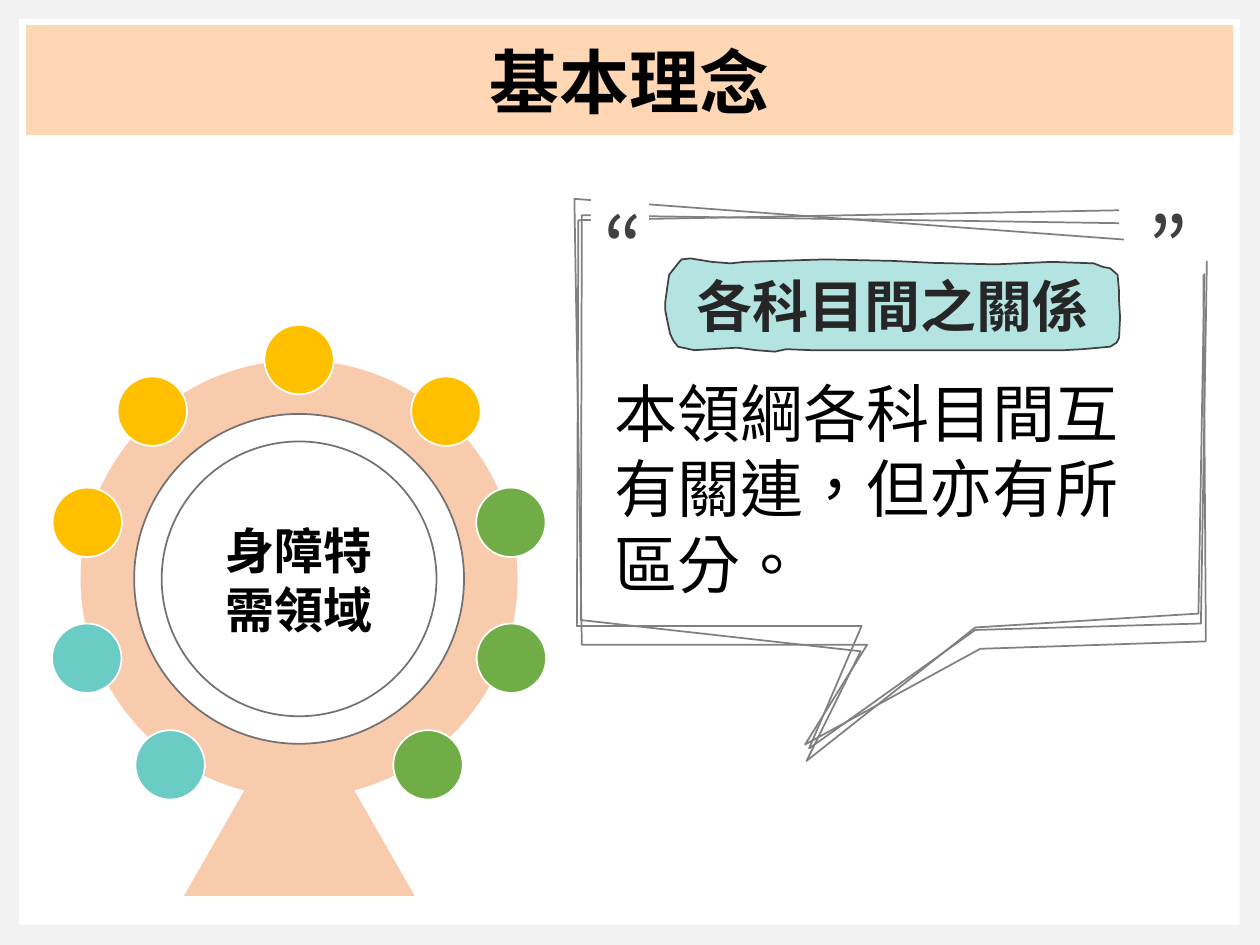
from dataclasses import dataclass

from lxml.etree import SubElement
from pptx import Presentation
from pptx.dml.color import RGBColor
from pptx.enum.shapes import MSO_SHAPE
from pptx.enum.text import MSO_ANCHOR, PP_ALIGN
from pptx.oxml.ns import qn
from pptx.util import Cm, Pt


@dataclass(frozen=True)
class Theme:
    backdrop: str = "F2F2F2"
    white: str = "FFFFFF"
    black: str = "000000"
    banner: str = "FFCDA3"
    wheel: str = "F8CBAD"
    ring: str = "767171"
    frame: str = "808080"
    dark: str = "404040"
    label_text: str = "262626"
    teal: str = "6BCBC5"
    gold: str = "FFC000"
    green: str = "70AD47"
    heading_font: str = "Noto Sans CJK SC"
    quote_font: str = "Noto Sans CJK KR"
    body_font: str = "Calibri"
    title_size: int = 40
    label_size: int = 32
    hub_size: int = 28
    body_size: int = 36
    quote_size: int = 48


theme = Theme()


def paint(shape, fill=None, line=None, alpha=None):
    shape.shadow.inherit = False
    if fill:
        shape.fill.solid()
        shape.fill.fore_color.rgb = RGBColor.from_string(fill)
    else:
        shape.fill.background()
    if alpha:
        color = shape.fill._xPr.find(qn("a:solidFill"))[0]
        SubElement(color, qn("a:alpha")).set("val", str(alpha * 1000))
    if line:
        shape.line.color.rgb = RGBColor.from_string(line)
        shape.line.width = Pt(1)
    else:
        shape.line.fill.background()
    return shape


def write(shape, text, size, font=theme.heading_font, color=theme.black, bold=False,
          align=PP_ALIGN.CENTER, anchor=MSO_ANCHOR.MIDDLE, spacing=None):
    frame = shape.text_frame
    frame.word_wrap = True
    frame.vertical_anchor = anchor
    para = frame.paragraphs[0]
    para.alignment = align
    para.line_spacing = spacing
    span = para.add_run()
    span.text = text
    span.font.size = Pt(size)
    span.font.bold = bold
    span.font.name = font
    span.font.color.rgb = RGBColor.from_string(color)
    properties = span._r.get_or_add_rPr()
    properties.set("lang", "zh-TW")
    SubElement(properties, qn("a:ea")).set("typeface", font)


deck = Presentation()
deck.slide_width, deck.slide_height = Cm(25.4), Cm(19.05)
page = deck.slides.add_slide(deck.slide_layouts[6])
page.background.fill.solid()
page.background.fill.fore_color.rgb = RGBColor.from_string(theme.backdrop)
shapes = page.shapes

# White card and title banner
card = shapes.add_shape(MSO_SHAPE.RECTANGLE, Cm(0.38), Cm(0.38), Cm(24.61), Cm(18.26))
paint(card, theme.white)
banner = shapes.add_shape(MSO_SHAPE.RECTANGLE, Cm(0.53), Cm(0.51), Cm(24.33), Cm(2.21))
paint(banner, theme.banner, alpha=80)
write(banner, "基本理念", theme.title_size, bold=True)

# Ferris wheel: stand, discs and cabins, as (x, y, diameter, fill, line)
stand = shapes.add_shape(MSO_SHAPE.ISOSCELES_TRIANGLE, Cm(3.71), Cm(14), Cm(4.65), Cm(4.06))
paint(stand, theme.wheel)
center_x, center_y = 6.03, 11.67
circles = [
    (0, 0, 8.81, theme.wheel, None),
    (0, 0, 6.65, theme.white, theme.ring),
    (0, 0, 5.54, theme.white, theme.ring),
    (0, -4.42, 1.4, theme.gold, theme.white),
]
cabin_pairs = [
    (2.96, -3.38, theme.gold, theme.gold),
    (4.27, -1.14, theme.gold, theme.green),
    (4.28, 1.6, theme.teal, theme.green),
    (2.6, 3.75, theme.teal, theme.green),
]
for x, y, left_color, right_color in cabin_pairs:
    circles.append((-x, y, 1.4, left_color, theme.white))
    circles.append((x, y, 1.4, right_color, theme.white))
discs = []
for x, y, diameter, fill, line in circles:
    disc = shapes.add_shape(
        MSO_SHAPE.FLOWCHART_CONNECTOR, Cm(center_x + x - diameter / 2),
        Cm(center_y + y - diameter / 2), Cm(diameter), Cm(diameter))
    discs.append(paint(disc, fill, line))
write(discs[2], "身障特需領域", theme.hub_size, bold=True, spacing=Pt(34))

# Sketched speech bubble and label, points in hundredths of a centimetre
bubble_lines = [
    [(2256, 424), (1166, 444), (1163, 1262), (1737, 1262),
     (1631, 1509), (1966, 1270), (2421, 1257), (2433, 526)],
    [(2256, 450), (1173, 434), (1171, 1250), (1735, 1313),
     (1626, 1534), (1966, 1265), (2416, 1237), (2428, 551)],
    [(2266, 483), (1158, 401), (1173, 1300), (1748, 1300),
     (1623, 1501), (1976, 1308), (2431, 1293), (2426, 554)],
]
label_outline = [
    (1435, 528), (1473, 531), (1501, 528), (1664, 523), (1798, 526), (1880, 530),
    (2007, 533), (2121, 528), (2205, 531), (2223, 538), (2238, 541), (2253, 554),
    (2256, 587), (2256, 607), (2258, 640), (2256, 681), (2251, 691), (2238, 699),
    (2182, 704), (2146, 706), (1636, 706), (1585, 704), (1562, 709), (1524, 706),
    (1486, 701), (1400, 706), (1367, 699), (1357, 686), (1351, 673), (1346, 650),
    (1341, 625), (1341, 610), (1346, 574), (1349, 554), (1367, 531), (1374, 523),
    (1392, 521),
]
for points in [*bubble_lines, label_outline]:
    closed = points is label_outline
    builder = shapes.build_freeform(*points[0], scale=Cm(0.01))
    builder.add_line_segments(points[1:], close=closed)
    outline = builder.convert_to_shape()
    if closed:
        paint(outline, theme.teal, theme.dark, alpha=50)
        write(outline, "各科目間之關係", theme.label_size, color=theme.label_text, bold=True)
    else:
        paint(outline, line=theme.frame)

# Quotation marks interrupting the bubble
for mark, left in (("“", 11.91), ("”", 22.91)):
    quote = shapes.add_shape(MSO_SHAPE.RECTANGLE, Cm(left), Cm(3.81), Cm(1.17), Cm(2.31))
    paint(quote, theme.white)
    write(quote, mark, theme.quote_size, font=theme.quote_font, color=theme.dark,
          align=PP_ALIGN.LEFT, anchor=MSO_ANCHOR.TOP)

# Body text
body = shapes.add_textbox(Cm(12.14), Cm(7.42), Cm(11.68), Cm(4.88))
write(body, "本領綱各科目間互有關連，但亦有所區分。", theme.body_size, font=theme.body_font,
      align=PP_ALIGN.LEFT, anchor=MSO_ANCHOR.TOP)

deck.save("out.pptx")
